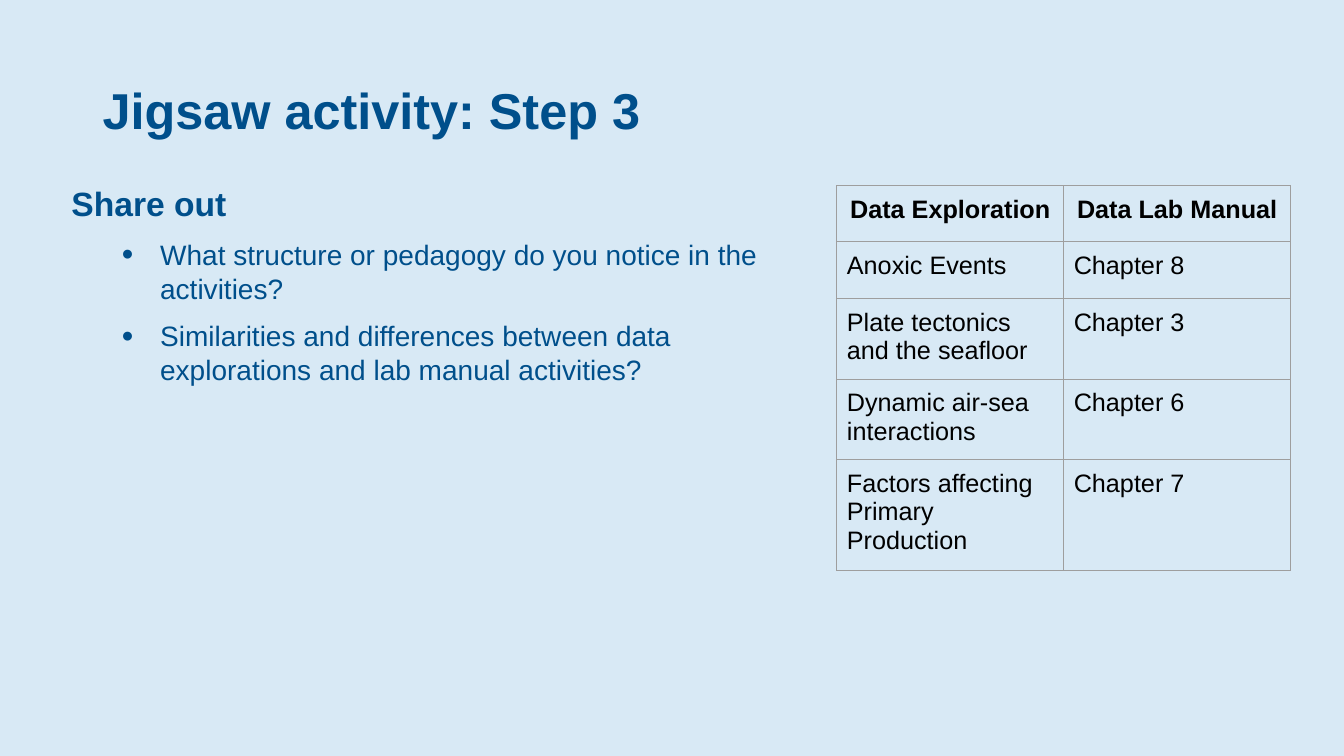
from dataclasses import dataclass

from lxml import etree
from pptx import Presentation
from pptx import util as u
from pptx.dml.color import RGBColor
from pptx.enum import text
from pptx.oxml.ns import qn

PX = 9144  # 100 px to the inch
NAVY, BLACK, GREY, SKY = "004F8B", "000000", "9E9E9E", "D8E9F5"


@dataclass
class Line:
    words: str
    size: int
    bold: bool = False
    level: int = 0
    margin: int = 0
    indent: int = 0
    before: int = 0
    bullet: str = ""


TITLE = [Line("Jigsaw activity: Step 3", 36, bold=True)]
QUESTIONS = [
    "What structure or pedagogy do you notice in the activities?",
    "Similarities and differences between data explorations and lab manual activities?",
]
BODY = [Line("Share out", 24, bold=True, margin=7)] + [
    Line(q, 20, level=1, margin=95, indent=-38, before=10, bullet="•") for q in QUESTIONS
]
ROWS = [
    ("Data Exploration", "Data Lab Manual"),
    ("Anoxic Events", "Chapter 8"),
    ("Plate tectonics and the seafloor", "Chapter 3"),
    ("Dynamic air-sea interactions", "Chapter 6"),
    ("Factors affecting Primary Production", "Chapter 7"),
]
COL_WIDTH, ROW_HEIGHT, CELL_MARGIN = 225, 56, 10


def px(n: int) -> u.Emu:
    return u.Emu(n * PX)


def color(value: str) -> RGBColor:
    return RGBColor.from_string(value)


def style(p, size: int, bold: bool, value: str) -> None:
    for r in p.runs:
        r.font.name = "Arial"
        r.font.size = u.Pt(size)
        r.font.bold = bold
        r.font.color.rgb = color(value)


def add_bullet(p, char: str) -> None:
    pPr = p._p.get_or_add_pPr()
    clr = etree.SubElement(pPr, qn("a:buClr"))
    etree.SubElement(clr, qn("a:srgbClr"), val=NAVY)
    etree.SubElement(pPr, qn("a:buSzPct"), val="117000")
    etree.SubElement(pPr, qn("a:buFont"), typeface="Arial")
    etree.SubElement(pPr, qn("a:buChar"), char=char)


def add_text(s, x: int, y: int, w: int, h: int, lines: list[Line], anchor, spacing: float = 1.0) -> None:
    tf = s.shapes.add_textbox(px(x), px(y), px(w), px(h)).text_frame
    tf.word_wrap = True
    tf.vertical_anchor = anchor
    for i, line in enumerate(lines):
        p = tf.add_paragraph() if i else tf.paragraphs[0]
        p.text = line.words
        p.level = line.level
        pPr = p._p.get_or_add_pPr()
        pPr.set("marL", str(px(line.margin)))
        pPr.set("indent", str(px(line.indent)))
        if line.bullet:
            add_bullet(p, line.bullet)
        p.line_spacing = spacing
        p.space_before = u.Pt(line.before)
        style(p, line.size, line.bold, NAVY)


def add_borders(cell) -> None:
    tcPr = cell._tc.get_or_add_tcPr()
    for i, side in enumerate(("lnL", "lnR", "lnT", "lnB")):
        ln = etree.Element(qn(f"a:{side}"), w=str(u.Pt(0.75)))
        fill = etree.SubElement(ln, qn("a:solidFill"))
        etree.SubElement(fill, qn("a:srgbClr"), val=GREY)
        tcPr.insert(i, ln)


def add_chapter_table(s, x: int, y: int) -> None:
    rows, cols = len(ROWS), len(ROWS[0])
    table = s.shapes.add_table(
        rows, cols, px(x), px(y), px(cols * COL_WIDTH), px(rows * ROW_HEIGHT)
    ).table
    table.first_row = table.horz_banding = False
    for i, row in enumerate(ROWS):
        header = i == 0
        for j, words in enumerate(row):
            cell = table.cell(i, j)
            cell.margin_left = cell.margin_right = px(CELL_MARGIN)
            cell.margin_top = cell.margin_bottom = px(CELL_MARGIN)
            cell.fill.background()
            add_borders(cell)
            p = cell.text_frame.paragraphs[0]
            p.text = words
            p.alignment = text.PP_ALIGN.CENTER if header else text.PP_ALIGN.LEFT
            style(p, 18, header, BLACK)


def main() -> None:
    prs = Presentation()
    prs.slide_width, prs.slide_height = px(1333), px(750)
    s = prs.slides.add_slide(prs.slide_layouts[6])
    s.background.fill.solid()
    s.background.fill.fore_color.rgb = color(SKY)
    add_text(s, 92, 40, 1150, 145, TITLE, text.MSO_ANCHOR.MIDDLE, spacing=0.9)
    add_text(s, 54, 177, 740, 519, BODY, text.MSO_ANCHOR.TOP)
    add_chapter_table(s, 830, 184)
    prs.save("out.pptx")


if __name__ == "__main__":
    main()
